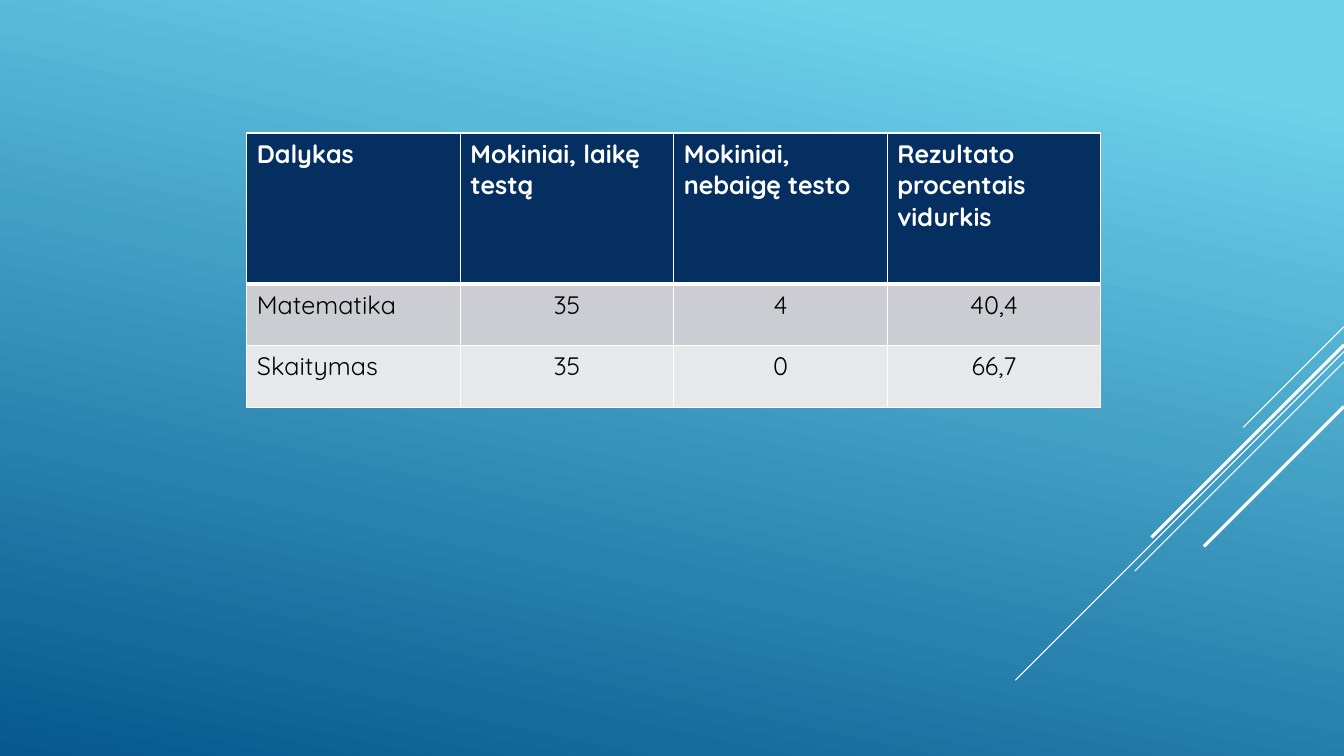
from lxml.etree import SubElement
from pptx import Presentation
from pptx.dml.color import RGBColor
from pptx.enum.shapes import MSO_CONNECTOR
from pptx.enum.text import PP_ALIGN
from pptx.oxml.ns import qn
from pptx.util import Cm, Pt

WIDE, HIGH = 33.87, 19.05
WHITE, BLACK, NAVY = "FFFFFF", "000000", "052F61"
BANDS = ["CCCDD2", "E7E8EA"]
FONT = "Quicksand"
ROWS = [
    ["Dalykas", "Mokiniai, laikę testą", "Mokiniai, nebaigę testo",
     "Rezultato procentais vidurkis"],
    ["Matematika", "35", "4", "40,4"],
    ["Skaitymas", "35", "0", "66,7"],
]
TALL = [3.81, 1.55, 1.55]
# Start height on the right edge, run to the lower left, line width
RAYS = [(8.23, 2.54, 0.75), (8.86, 8.28, 0.75), (9.12, 5.27, 0.75),
        (8.69, 4.85, 2.25), (10.24, 3.53, 2.25)]


def color(code):
    return RGBColor.from_string(code)


def draw_back(slide):
    fill = slide.background.fill
    fill.gradient()
    fill.gradient_angle = 258
    for stop, place, code in zip(fill.gradient_stops, (0.1, 1), ("6ED2EB", "06588E")):
        stop.position = place
        stop.color.rgb = color(code)


def draw_rays(slide, right, top):
    for drop, run, width in RAYS:
        y = top + drop
        ray = slide.shapes.add_connector(
            MSO_CONNECTOR.STRAIGHT, Cm(right), Cm(y), Cm(right - run), Cm(y + run))
        ray.line.color.rgb = color(WHITE)
        ray.line.width = Pt(width)
        SubElement(ray._element.spPr, qn("a:effectLst"))


def edge_cell(cell, row):
    props = cell._tc.get_or_add_tcPr()
    thick = {0: "lnB", 1: "lnT"}.get(row)
    for side in ("lnL", "lnR", "lnT", "lnB"):
        width = Pt(3 if side == thick else 1)
        line = SubElement(props, qn("a:" + side), w=str(width))
        solid = SubElement(line, qn("a:solidFill"))
        SubElement(solid, qn("a:srgbClr"), val=WHITE)


def fill_cell(cell, text, row, col):
    head = row == 0
    edge_cell(cell, row)
    cell.fill.solid()
    cell.fill.fore_color.rgb = color(NAVY if head else BANDS[row - 1])
    cell.text_frame.text = text
    para = cell.text_frame.paragraphs[0]
    para.alignment = PP_ALIGN.LEFT if head or col == 0 else PP_ALIGN.CENTER
    font = para.runs[0].font
    font.name, font.size, font.bold = FONT, Pt(18), head
    font.color.rgb = color(WHITE if head else BLACK)


def draw_table(slide, left, top, width):
    count = len(ROWS[0])
    frame = slide.shapes.add_table(
        len(ROWS), count, Cm(left), Cm(top), Cm(width), Cm(sum(TALL)))
    table = frame.table
    table.horz_banding = False
    for col in table.columns:
        col.width = Cm(width / count)
    for r, (texts, tall) in enumerate(zip(ROWS, TALL)):
        table.rows[r].height = Cm(tall)
        for c, text in enumerate(texts):
            fill_cell(table.cell(r, c), text, r, c)


def main():
    deck = Presentation()
    deck.slide_width, deck.slide_height = Cm(WIDE), Cm(HIGH)
    slide = deck.slides.add_slide(deck.slide_layouts[6])
    # Backdrop
    draw_back(slide)
    # Slanted lines at the right edge
    draw_rays(slide, WIDE, 0)
    # Test results
    draw_table(slide, 6.22, 3.35, 21.52)
    deck.save("out.pptx")


if __name__ == "__main__":
    main()
